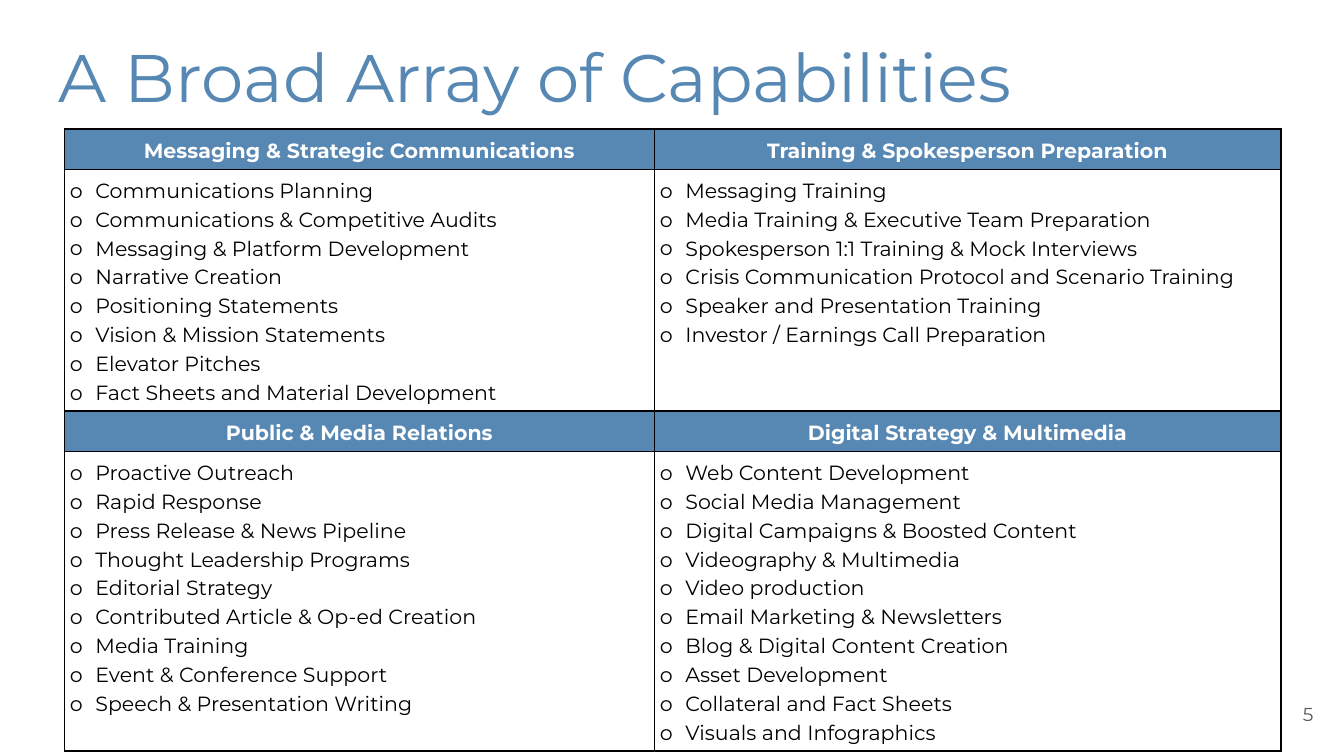
"""Build a slide with a titled two-by-two table of capabilities."""
from lxml import etree
from pptx import Presentation
from pptx.dml.color import RGBColor
from pptx.enum.text import MSO_ANCHOR, PP_ALIGN
from pptx.oxml.ns import qn
from pptx.util import Inches, Pt

LEFT, MID, RIGHT = PP_ALIGN.LEFT, PP_ALIGN.CENTER, PP_ALIGN.RIGHT
TOP, MIDDLE = MSO_ANCHOR.TOP, MSO_ANCHOR.MIDDLE
BLUE = RGBColor(0x57, 0x88, 0xB4)
GRAY = RGBColor(0x59, 0x59, 0x59)
BLACK = RGBColor(0, 0, 0)
WHITE = RGBColor(0xFF, 0xFF, 0xFF)

FACE = "Montserrat"
HEAD = {"size": Pt(11), "bold": True, "color": WHITE}
ITEM = {"size": Pt(11), "bold": False, "color": BLACK}
SIDES = ("left", "top", "right", "bottom")
COLS = (4.39, 4.66)
ROWS = (0.3, 1.8, 0.3, 2.23)

GROUPS = [
    [
        ("Messaging & Strategic Communications", [
            "Communications Planning",
            "Communications & Competitive Audits",
            "Messaging & Platform Development",
            "Narrative Creation",
            "Positioning Statements",
            "Vision & Mission Statements",
            "Elevator Pitches",
            "Fact Sheets and Material Development",
        ]),
        ("Training & Spokesperson Preparation", [
            "Messaging Training",
            "Media Training & Executive Team Preparation",
            "Spokesperson 1:1 Training & Mock Interviews",
            "Crisis Communication Protocol and Scenario Training",
            "Speaker and Presentation Training",
            "Investor / Earnings Call Preparation",
        ]),
    ],
    [
        ("Public & Media Relations", [
            "Proactive Outreach",
            "Rapid Response",
            "Press Release & News Pipeline",
            "Thought Leadership Programs",
            "Editorial Strategy",
            "Contributed Article & Op-ed Creation",
            "Media Training",
            "Event & Conference Support",
            "Speech & Presentation Writing",
        ]),
        ("Digital Strategy & Multimedia", [
            "Web Content Development",
            "Social Media Management",
            "Digital Campaigns & Boosted Content",
            "Videography & Multimedia",
            "Video production",
            "Email Marketing & Newsletters",
            "Blog & Digital Content Creation",
            "Asset Development",
            "Collateral and Fact Sheets",
            "Visuals and Infographics",
        ]),
    ],
]


def add_run(para, text, style):
    """Add a run and set its font from a dict of values."""
    run = para.add_run()
    run.text = text
    run.font.name = FACE
    for key, value in style.items():
        if key == "color":
            run.font.color.rgb = value
        else:
            setattr(run.font, key, value)


def add_label(slide, box, text, style, align, anchor):
    """Add a one-line text box."""
    frame = slide.shapes.add_textbox(*map(Inches, box)).text_frame
    frame.word_wrap = True
    frame.vertical_anchor = anchor
    for side in SIDES:
        setattr(frame, "margin_" + side, Inches(0.1))
    para = frame.paragraphs[0]
    para.alignment = align
    add_run(para, text, style)


def add_color(node, color):
    """Append a plain colour to an XML node."""
    etree.SubElement(node, qn("a:srgbClr"), val=str(color))


def add_mark(para):
    """Give a paragraph a hanging round bullet."""
    props = para._p.get_or_add_pPr()
    props.set("marL", str(Inches(0.19)))
    props.set("indent", str(-Inches(0.19)))
    add_color(etree.SubElement(props, qn("a:buClr")), BLACK)
    etree.SubElement(props, qn("a:buFont"), typeface=FACE)
    etree.SubElement(props, qn("a:buChar"), char="o")


def add_edges(cell):
    """Draw a thin black line on each side of a cell."""
    props = cell._tc.get_or_add_tcPr()
    for tag in ("a:lnL", "a:lnR", "a:lnT", "a:lnB"):
        line = etree.SubElement(props, qn(tag), w=str(Pt(1)))
        add_color(etree.SubElement(line, qn("a:solidFill")), BLACK)


def fill_cell(cell, lines, style, fill, align, marked):
    """Write lines in a cell and set its look."""
    for side in SIDES:
        setattr(cell, "margin_" + side, Inches(0.04))
    add_edges(cell)
    cell.fill.solid()
    cell.fill.fore_color.rgb = fill
    frame = cell.text_frame
    for num, text in enumerate(lines):
        para = frame.add_paragraph() if num else frame.paragraphs[0]
        para.alignment = align
        para.line_spacing = 1.15
        if marked:
            add_mark(para)
        add_run(para, text, style)


def add_grid(slide):
    """Add the table, with a head row above each row of lists."""
    box = map(Inches, (0.48, 0.96, sum(COLS), sum(ROWS)))
    table = slide.shapes.add_table(len(ROWS), len(COLS), *box).table
    for col, width in zip(table.columns, COLS):
        col.width = Inches(width)
    for row, height in zip(table.rows, ROWS):
        row.height = Inches(height)
    for band, pair in enumerate(GROUPS):
        for col, (name, items) in enumerate(pair):
            head = table.cell(2 * band, col)
            body = table.cell(2 * band + 1, col)
            fill_cell(head, [name], HEAD, BLUE, MID, False)
            fill_cell(body, items, ITEM, WHITE, LEFT, True)


def main():
    """Build and save the slide."""
    deck = Presentation()
    deck.slide_width = Inches(10)
    deck.slide_height = deck.slide_width * 9 // 16
    slide = deck.slides.add_slide(deck.slide_layouts[6])
    add_label(slide, (0.34, 0.16, 9.32, 0.68), "A Broad Array of Capabilities",
              {"size": Pt(36), "color": BLUE}, LEFT, TOP)
    add_label(slide, (9.27, 5.1, 0.6, 0.43), "5",
              {"size": Pt(10), "color": GRAY}, RIGHT, MIDDLE)
    add_grid(slide)
    deck.save("out.pptx")


if __name__ == "__main__":
    main()
